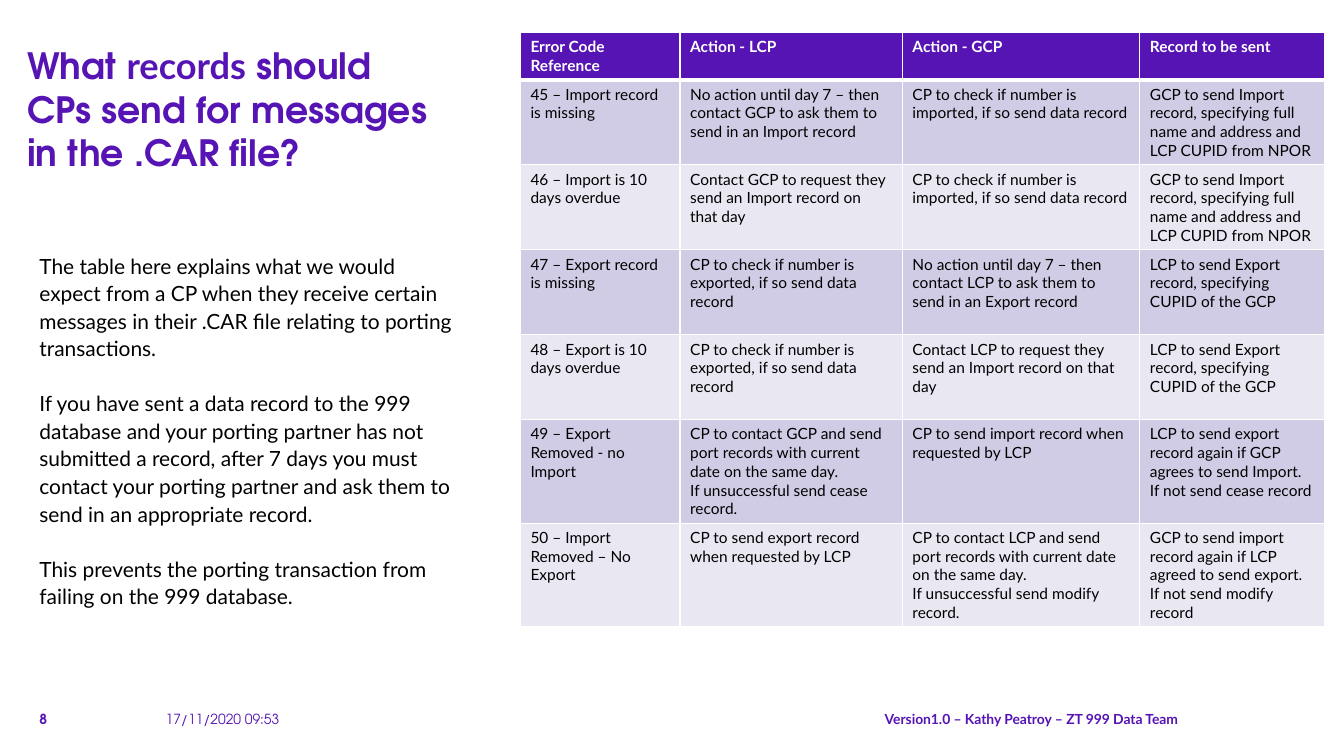
"""Build the slide on which records to send for each .CAR file message."""
from dataclasses import dataclass

import lxml.etree
import pptx
import pptx.dml.color
import pptx.enum.text
import pptx.oxml.ns
import pptx.util

Inches = pptx.util.Inches
Pt = pptx.util.Pt
Align = pptx.enum.text.PP_ALIGN
Anchor = pptx.enum.text.MSO_ANCHOR


@dataclass(frozen=True)
class Theme:
    """Fonts, colours and type sizes."""
    heading_font: str = "TeX Gyre Adventor"
    text_font: str = "Lato"
    purple: str = "5514B3"
    black: str = "000000"
    white: str = "FFFFFF"
    bands: tuple = ("D1CCE5", "E9E7F2")
    title_size: float = 25.8
    body_size: float = 14.9
    table_size: float = 11
    footer_size: float = 9.9


THEME = Theme()

TITLE = [
    ("What ", THEME.heading_font),
    ("records", THEME.text_font),
    (" should CPs send for messages in the .CAR file?", THEME.heading_font),
]
BODY = [
    "The table here explains what we would expect from a CP when they receive certain "
    "messages in their .CAR file relating to porting transactions.",
    "If you have sent a data record to the 999 database and your porting partner has not "
    "submitted a record, after 7 days you must contact your porting partner and ask them "
    "to send in an appropriate record.",
    "This prevents the porting transaction from failing on the 999 database.",
]
FOOTERS = [
    ("8", 0.39, 0.39, THEME.heading_font, True, Align.LEFT),
    ("Version1.0 – Kathy Peatroy – ZT 999 Data Team", 3.99, 7.67,
     THEME.text_font, True, Align.RIGHT),
    ("17/11/2020 09:53", 1.64, 2.03, THEME.heading_font, False, Align.LEFT),
]
ACTIONS = [
    ("Error Code Reference", "Action - LCP", "Action - GCP", "Record to be sent"),
    ("45 – Import record is missing",
     "No action until day 7 – then contact GCP to ask them to send in an Import record",
     "CP to check if number is imported, if so send data record",
     "GCP to send Import record, specifying full name and address and LCP CUPID from NPOR"),
    ("46 – Import is 10 days overdue",
     "Contact GCP to request they send an Import record on that day",
     "CP to check if number is imported, if so send data record",
     "GCP to send Import record, specifying full name and address and LCP CUPID from NPOR"),
    ("47 – Export record is missing",
     "CP to check if number is exported, if so send data record",
     "No action until day 7 – then contact LCP to ask them to send in an Export record",
     "LCP to send Export record, specifying CUPID of the GCP"),
    ("48 – Export is 10 days overdue",
     "CP to check if number is exported, if so send data record",
     "Contact LCP to request they send an Import record on that day",
     "LCP to send Export record, specifying CUPID of the GCP"),
    ("49 – Export Removed - no Import",
     "CP to contact GCP and send port records with current date on the same day.\v"
     "If unsuccessful send cease record.",
     "CP to send import record when requested by LCP",
     "LCP to send export record again if GCP agrees to send Import. "
     "If not send cease record"),
    ("50 – Import Removed – No Export",
     "CP to send export record when requested by LCP",
     "CP to contact LCP and send port records with current date on the same day.\v"
     "If unsuccessful send modify record.",
     "GCP to send import record again if LCP agreed to send export. "
     "If not send modify record"),
]
COLUMN_WIDTHS = [1.58, 2.2, 2.35, 1.83]
ROW_HEIGHTS = [0.47] + [0.84] * 4 + [1.02] * 2


def color(value):
    """Return an RGB colour from its hex value."""
    return pptx.dml.color.RGBColor.from_string(value)


def set_font(font, name, size, value, bold=False):
    """Set face, size, colour and weight of a font."""
    font.name, font.size, font.bold = name, Pt(size), bold
    font.color.rgb = color(value)


def place(box, left, top, width, height, anchor=Anchor.TOP):
    """Place a text shape and clear its insets."""
    box.left, box.top = Inches(left), Inches(top)
    box.width, box.height = Inches(width), Inches(height)
    frame = box.text_frame
    frame.margin_left = frame.margin_top = frame.margin_right = frame.margin_bottom = 0
    frame.word_wrap = True
    frame.auto_size = pptx.enum.text.MSO_AUTO_SIZE.NONE
    frame.vertical_anchor = anchor
    return frame


def add_title(page):
    """Fill the title placeholder."""
    para = place(page.shapes.title, 0.27, 0.43, 4.02, 1.56).paragraphs[0]
    para.alignment = Align.LEFT
    for text, face in TITLE:
        span = para.add_run()
        span.text = text
        set_font(span.font, face, THEME.title_size, THEME.purple, True)


def add_body(page):
    """Fill the body placeholder with plain paragraphs."""
    frame = place(page.placeholders[1], 0.39, 2.48, 4.13, 3.94)
    frame.text = "\n".join(BODY)
    for para in frame.paragraphs:
        properties = para._p.get_or_add_pPr()
        properties.set("marL", "0")
        properties.set("indent", "0")
        lxml.etree.SubElement(properties, pptx.oxml.ns.qn("a:buNone"))
        para.line_spacing = 1.1
        para.space_before, para.space_after = Pt(0), Pt(19.4)
        set_font(para.font, THEME.text_font, THEME.body_size, THEME.black)


def add_footers(page):
    """Add page number, version and date."""
    for text, left, width, face, bold, alignment in FOOTERS:
        box = page.shapes.add_textbox(0, 0, 0, 0)
        frame = place(box, left, 6.91, width, 0.29, Anchor.BOTTOM)
        frame.text = text
        para = frame.paragraphs[0]
        para.alignment = alignment
        set_font(para.font, face, THEME.footer_size, THEME.purple, bold)


def set_borders(cell, top, bottom):
    """Draw white borders, one point wide at the sides."""
    properties = cell._tc.get_or_add_tcPr()
    for side, width in (("L", 1), ("R", 1), ("T", top), ("B", bottom)):
        line = lxml.etree.SubElement(
            properties, pptx.oxml.ns.qn(f"a:ln{side}"), w=str(Pt(width)))
        fill = lxml.etree.SubElement(line, pptx.oxml.ns.qn("a:solidFill"))
        lxml.etree.SubElement(fill, pptx.oxml.ns.qn("a:srgbClr"), val=THEME.white)


def add_actions(page):
    """Add the table of error codes and actions."""
    table = page.shapes.add_table(
        len(ACTIONS), len(COLUMN_WIDTHS), Inches(5.15), Inches(0.32),
        Inches(sum(COLUMN_WIDTHS)), Inches(sum(ROW_HEIGHTS))).table
    for column, width in zip(table.columns, COLUMN_WIDTHS):
        column.width = Inches(width)
    for index, (row, height, texts) in enumerate(zip(table.rows, ROW_HEIGHTS, ACTIONS)):
        row.height = Inches(height)
        header = index == 0
        fill = THEME.purple if header else THEME.bands[(index - 1) % 2]
        ink = THEME.white if header else THEME.black
        for cell, text in zip(row.cells, texts):
            set_borders(cell, 3 if index == 1 else 1, 3 if header else 1)
            cell.fill.solid()
            cell.fill.fore_color.rgb = color(fill)
            cell.text = text
            set_font(cell.text_frame.paragraphs[0].font, THEME.text_font,
                     THEME.table_size, ink, header)


def main():
    """Build and save the deck."""
    deck = pptx.Presentation()
    deck.slide_width, deck.slide_height = Inches(13.3), Inches(7.48)
    page = deck.slides.add_slide(deck.slide_layouts[1])
    add_title(page)
    add_body(page)
    add_footers(page)
    add_actions(page)
    deck.save("out.pptx")


if __name__ == "__main__":
    main()
